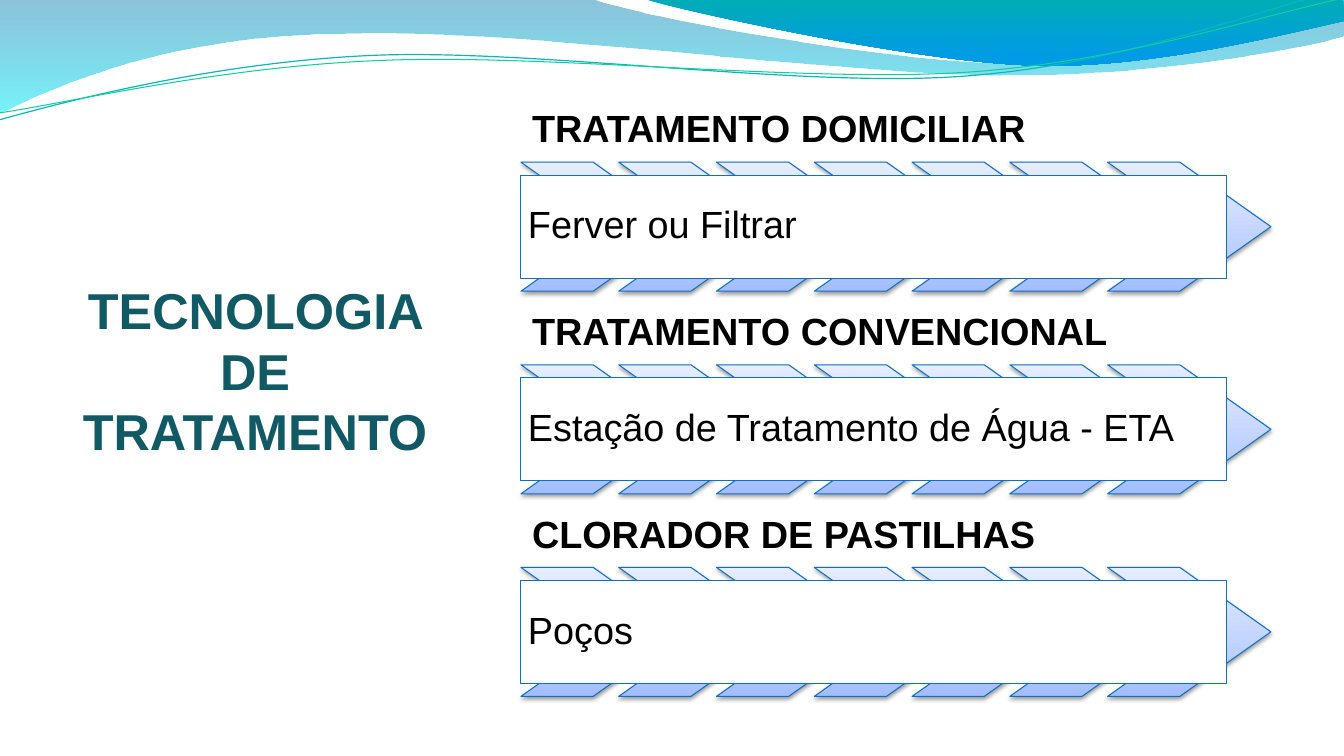
from dataclasses import dataclass
from math import cos, radians, sin
from typing import NamedTuple

from lxml.etree import SubElement
from pptx import Presentation
from pptx.dml.color import RGBColor as Color
from pptx.enum.shapes import MSO_SHAPE as Preset
from pptx.enum.text import MSO_ANCHOR as Anchor, PP_ALIGN as Align
from pptx.oxml import parse_xml
from pptx.oxml.ns import nsdecls, qn
from pptx.util import Pt


class Stop(NamedTuple):
    position: int
    color: str
    opacity: int = 100


class Gradient(NamedTuple):
    angle: int
    stops: tuple


class Box(NamedTuple):
    left: float
    top: float
    width: float
    height: float

    def lengths(self) -> list:
        return [Pt(value) for value in self]


@dataclass(frozen=True)
class Theme:
    font: str = "Arial"
    title_size: float = 36
    body_size: float = 27
    title: str = "115964"
    text: str = "000000"
    panel: str = "FFFFFF"
    outline: str = "0F6FC6"
    outline_width: float = 0.75
    chevron: Gradient = Gradient(270, (Stop(0, "A3BDFF"), Stop(35, "BED0FF"), Stop(100, "E6EDFF")))
    pale_wave: Gradient = Gradient(90, (Stop(0, "0079AF", 45), Stop(100, "00EBF8", 55)))
    deep_wave: Gradient = Gradient(90, (Stop(0, "00ADB6"), Stop(80, "009BE5"), Stop(100, "009BE5")))
    teal_line: str = "09B6BE"
    green_line: str = "10CF9B"


THEME = Theme()


@dataclass(frozen=True)
class Wave:
    """Each segment holds one point for a line or three for a Bezier curve."""
    start: tuple
    segments: tuple
    gradient: Gradient | None = None
    line_color: str = ""
    line_width: float = 0
    tilt: float = 0
    center: tuple = (0, 0)


@dataclass(frozen=True)
class Treatment:
    heading: str
    method: str


WAVES = (
    Wave((0, -0.7), (
        ((422.6, -0.7),),
        ((456.5, 12.2), (637.2, 45.4), (727.9, 45.4)),
        ((819.4, 45.4), (920.2, 18.7), (959.8, 6.5)),
        ((961.2, 25.9),),
        ((943.9, 31.7), (835.2, 54.7), (715.7, 54)),
        ((596.9, 54), (366.5, 20.2), (247, 24.5)),
        ((123.1, 25.2), (43.9, 59.8), (-0.7, 81.4)),
    ), gradient=THEME.pale_wave),
    Wave((460.1, -0.7), (
        ((488.9, 7.9), (654.5, 44.6), (738, 46.8)),
        ((821.5, 49.7), (923, 23), (959.8, 15.1)),
        ((959.8, 0),),
    ), gradient=THEME.deep_wave),
    Wave((-0.7, 85.7), (
        ((46.1, 72.7), (151.9, 44.6), (265.7, 39.6)),
        ((379.4, 34.6), (568.8, 62.6), (684, 54.7)),
        ((799.2, 47.5), (901.4, 5.8), (958.3, -7.2)),
    ), line_color=THEME.teal_line, line_width=0.85, tilt=-2.7, center=(478.8, 41.4)),
    Wave((0, 80.6), (
        ((45.4, 74.2), (157, 47.5), (272.2, 43.2)),
        ((386.6, 38.2), (572.4, 59), (687.6, 51.8)),
        ((802.8, 44.6), (903.6, 10.1), (960.5, -1.4)),
    ), line_color=THEME.green_line, line_width=0.75, tilt=-2.7, center=(480.2, 42.5)),
)

TREATMENTS = (
    Treatment("TRATAMENTO DOMICILIAR", "Ferver ou Filtrar"),
    Treatment("TRATAMENTO CONVENCIONAL", "Estação de Tratamento de Água - ETA"),
    Treatment("CLORADOR DE PASTILHAS", "Poços"),
)

LIST_LEFT, LIST_TOP, ROW_PITCH = 372.1, 70.5, 144.7
CHEVRON_COUNT, CHEVRON_PITCH = 7, 69.84


def set_gradient(shape, gradient: Gradient) -> None:
    stops = "".join(
        f'<a:gs pos="{stop.position * 1000}"><a:srgbClr val="{stop.color}">'
        f'<a:alpha val="{stop.opacity * 1000}"/></a:srgbClr></a:gs>'
        for stop in gradient.stops)
    shape.fill.background()
    properties = shape._element.spPr
    properties.replace(properties.find(qn("a:noFill")), parse_xml(
        f'<a:gradFill {nsdecls("a")} rotWithShape="1"><a:gsLst>{stops}</a:gsLst>'
        f'<a:lin ang="{gradient.angle * 60000}" scaled="0"/></a:gradFill>'))


def set_line(shape, color: str, width: float) -> None:
    shape.line.color.rgb = Color.from_string(color)
    shape.line.width = Pt(width)


def add_shadow(shape) -> None:
    shape._element.spPr.find(qn("a:effectLst")).append(parse_xml(
        f'<a:outerShdw {nsdecls("a")} blurRad="{Pt(3.1)}" dist="{Pt(1.6)}" dir="5400000" '
        'rotWithShape="0"><a:srgbClr val="000000"><a:alpha val="38000"/></a:srgbClr></a:outerShdw>'))


def level_point(point: tuple, wave: Wave) -> tuple:
    """Undo the tilt, which the rotation of the shape applies again."""
    angle = radians(-wave.tilt)
    x, y = point[0] - wave.center[0], point[1] - wave.center[1]
    return (Pt(wave.center[0] + x * cos(angle) - y * sin(angle)),
            Pt(wave.center[1] + x * sin(angle) + y * cos(angle)))


def bend_segments(shape, segments: tuple) -> None:
    """Join the three lines of each curved segment into one Bezier curve."""
    lines = iter(list(shape._element.iter(qn("a:lnTo"))))
    for segment in segments:
        first, *others = [next(lines) for _ in segment]
        if others:
            curve = SubElement(first.getparent(), qn("a:cubicBezTo"))
            first.addprevious(curve)
            for line in (first, *others):
                curve.append(line[0])
                line.getparent().remove(line)


def add_wave(slide, wave: Wave) -> None:
    builder = slide.shapes.build_freeform(*level_point(wave.start, wave))
    builder.add_line_segments(
        [level_point(point, wave) for segment in wave.segments for point in segment],
        close=wave.gradient is not None)
    shape = builder.convert_to_shape()
    bend_segments(shape, wave.segments)
    shape.rotation = wave.tilt
    shape.shadow.inherit = False
    if wave.gradient:
        set_gradient(shape, wave.gradient)
        shape.line.fill.background()
    else:
        shape.fill.background()
        set_line(shape, wave.line_color, wave.line_width)


def write_text(shape, text: str, size: float, color: str, anchor, margins: tuple,
               align=Align.LEFT, spacing: float = 0.9, bold: bool = False) -> None:
    frame = shape.text_frame
    paragraph = frame.paragraphs[0]
    paragraph.text = text
    left, top, right, bottom = map(Pt, margins)
    formats = {
        frame: {"word_wrap": True, "vertical_anchor": anchor, "margin_left": left,
                "margin_top": top, "margin_right": right, "margin_bottom": bottom},
        paragraph: {"alignment": align, "line_spacing": spacing},
        paragraph.runs[0].font: {"name": THEME.font, "size": Pt(size), "bold": bold},
    }
    for target, values in formats.items():
        for name, value in values.items():
            setattr(target, name, value)
    paragraph.runs[0].font.color.rgb = Color.from_string(color)


def add_treatment(slide, treatment: Treatment, top: float) -> None:
    # Heading
    heading = slide.shapes.add_textbox(*Box(LIST_LEFT, top, 497.52, 45.36).lengths())
    write_text(heading, treatment.heading, THEME.body_size, THEME.text, Anchor.BOTTOM,
               (7.92,) * 4, bold=True)
    # Row of chevrons
    for index in range(CHEVRON_COUNT):
        box = Box(LIST_LEFT + index * CHEVRON_PITCH, top + 45.36, 116.64, 92.16)
        chevron = slide.shapes.add_shape(Preset.CHEVRON, *box.lengths())
        chevron.adjustments[0] = 0.706
        chevron.shadow.inherit = False
        set_gradient(chevron, THEME.chevron)
        set_line(chevron, THEME.outline, THEME.outline_width)
        add_shadow(chevron)
    # Panel with the method
    panel = slide.shapes.add_shape(Preset.RECTANGLE, *Box(LIST_LEFT, top + 54.72, 504, 73.44).lengths())
    panel.shadow.inherit = False
    panel.fill.solid()
    panel.fill.fore_color.rgb = Color.from_string(THEME.panel)
    set_line(panel, THEME.outline, THEME.outline_width)
    write_text(panel, treatment.method, THEME.body_size, THEME.text, Anchor.MIDDLE, (5.04,) * 4)


def main() -> None:
    presentation = Presentation()
    presentation.slide_width, presentation.slide_height = Pt(960), Pt(540)
    slide = presentation.slides.add_slide(presentation.slide_layouts[6])
    # Waves across the top
    for wave in WAVES:
        add_wave(slide, wave)
    # Title
    title = slide.shapes.add_textbox(*Box(44.64, 239.04, 275.04, 90).lengths())
    write_text(title, "TECNOLOGIA DE TRATAMENTO", THEME.title_size, THEME.title, Anchor.BOTTOM,
               (0, 3.6, 0, 0), align=Align.CENTER, spacing=1, bold=True)
    # Treatments
    for row, treatment in enumerate(TREATMENTS):
        add_treatment(slide, treatment, LIST_TOP + row * ROW_PITCH)
    presentation.save("out.pptx")


if __name__ == "__main__":
    main()
